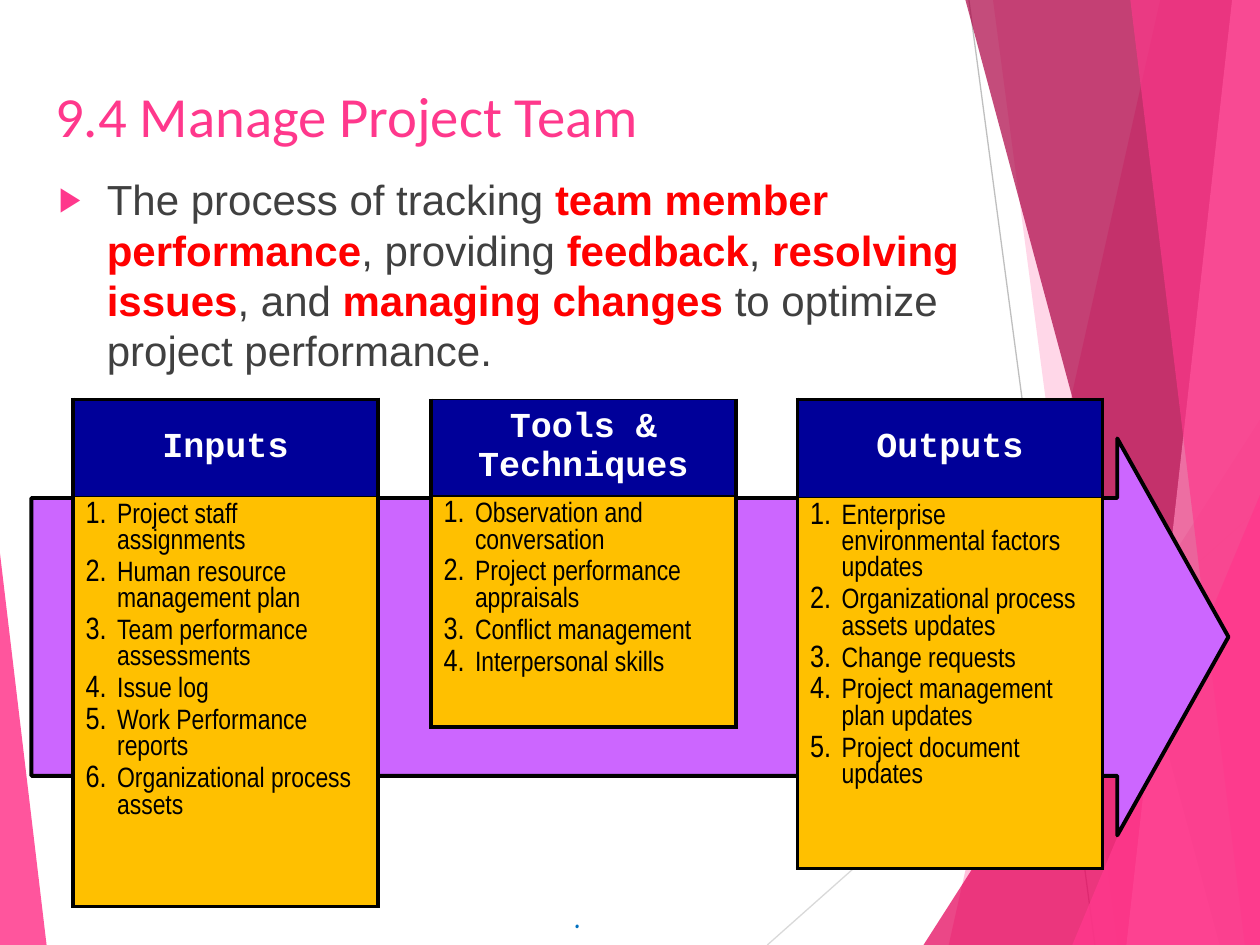
"""Build the Manage Project Team slide."""
from lxml import etree
from pptx import Presentation
from pptx import util as u
from pptx.dml import color
from pptx.enum import shapes, text
from pptx.oxml import ns

TITLE = "9.4 Manage Project Team"
BODY = [
    ("The process of tracking ", False), ("team member performance", True),
    (", providing ", False), ("feedback", True), (", ", False),
    ("resolving issues", True), (", and ", False),
    ("managing changes ", True), ("to optimize project performance.", False),
]
TABLES = [
    ("Inputs", 0.58, 0.77, 2.57, 2.25, [
        "Project staff assignments", "Human resource management plan",
        "Team performance assessments", "Issue log",
        "Work Performance reports", "Organizational process assets"]),
    ("Tools & Techniques", 3.42, 0.71, 1.48, 1, [
        "Observation and conversation", "Project performance appraisals",
        "Conflict management", "Interpersonal skills"]),
    ("Outputs", 6.33, 0.78, 2.57, 2.25, [
        "Enterprise environmental factors updates",
        "Organizational process assets updates", "Change requests",
        "Project management plan updates", "Project document updates"]),
]
RULES = [((7.69, 0), (8.69, 7.5), "BFBFBF"), ((10, 4.03), (6.09, 7.5), "D9D9D9")]
DECOR = [
    ("band", (9.21, 7.53), "FF388C", 30),
    ("band", (7.88, 8.87), "FF388C", 20),
    ("peak", (7.33, 3.33, 2.67, 4.17, 1), "E40059", 72),
    ("band", (7.66, 9.68), "AB0043", 70),
    ("band", (9.78, 8.94), "FF88BA", 70),
    ("band", (8.97, 9.88), "FF388C", 65),
    ("peak", (8.51, 3.93, 1.49, 3.57, 1), "FF388C", 80),
    ("peak", (0, 4.39, 0.37, 3.11, 0), "FF388C", 85),
]


def rgb(code):
    """Turn a hex string into a colour."""
    return color.RGBColor.from_string(code)


def node(base, tag, **attrs):
    """Append a drawing element."""
    return etree.SubElement(base, ns.qn("a:" + tag), attrs)


def paint(shape, code, alpha=100):
    """Fill a shape flat, with the given opacity."""
    shape.shadow.inherit = False
    shape.fill.solid()
    shape.fill.fore_color.rgb = rgb(code)
    shape.line.fill.background()
    if alpha < 100:
        tint = shape.fill._xPr.find(".//" + ns.qn("a:srgbClr"))
        node(tint, "alpha", val=str(alpha * 1000))


def write(para, words, size, font, code, bold=False):
    """Add one run."""
    run = para.add_run()
    run.text = words
    run.font.size, run.font.name, run.font.bold = u.Pt(size), font, bold
    run.font.color.rgb = rgb(code)


def bullet(para, indent, size, tag, code=None, **attrs):
    """Give a paragraph a hanging bullet or number."""
    props = para._p.get_or_add_pPr()
    props.set("marL", str(u.Inches(indent)))
    props.set("indent", str(-u.Inches(indent)))
    if code:
        node(node(props, "buClr"), "srgbClr", val=code)
    node(props, "buSzPct", val=str(size * 1000))
    node(props, "buFont", typeface="Arial")
    node(props, tag, **attrs)


def box(slide, *place):
    """Add a wrapping text box and return its first paragraph."""
    frame = slide.shapes.add_textbox(*map(u.Inches, place)).text_frame
    frame.word_wrap = True
    frame.vertical_anchor = text.MSO_ANCHOR.TOP
    return frame.paragraphs[0]


def dress(cell, code, top, base):
    """Set the borders and fill of a cell."""
    props = cell._tc.get_or_add_tcPr()
    for side, width in zip("LRTB", (2.25, 2.25, top, base)):
        edge = node(props, "ln" + side, w=str(u.Pt(width)))
        node(node(edge, "solidFill"), "srgbClr", val="000000")
    cell.fill.solid()
    cell.fill.fore_color.rgb = rgb(code)


def decorate(slide):
    """Draw the rules and the coloured facets."""
    for start, end, code in RULES:
        rule = slide.shapes.add_connector(
            shapes.MSO_CONNECTOR.STRAIGHT, *map(u.Inches, start + end))
        rule.line.color.rgb, rule.line.width = rgb(code), u.Pt(0.75)
        node(rule._element.spPr, "effectLst")
    for kind, spot, code, alpha in DECOR:
        if kind == "band":
            top, base = spot
            pen = slide.shapes.build_freeform(
                u.Inches(top), u.Inches(-0.01))
            pts = [(10, -0.01), (10, 7.5), (base, 7.5)]
            pen.add_line_segments([(u.Inches(x), u.Inches(y)) for x, y in pts])
            shape = pen.convert_to_shape()
        else:
            shape = slide.shapes.add_shape(
                shapes.MSO_SHAPE.ISOSCELES_TRIANGLE, *map(u.Inches, spot[:4]))
            shape.adjustments[0] = spot[4]
        paint(shape, code, alpha)


def tabulate(slide, name, left, head, depth, top, items):
    """Add a headed table with a numbered list."""
    table = slide.shapes.add_table(
        2, 1, *map(u.Inches, (left, 3.17, 2.42, head + depth))).table
    for row, high in zip(table.rows, (head, depth)):
        row.height = u.Inches(high)
    first, last = table.cell(0, 0), table.cell(1, 0)
    dress(first, "000099", top, 1)
    dress(last, "FFC000", 1, 2.25)
    first.vertical_anchor = text.MSO_ANCHOR.MIDDLE
    para = first.text_frame.paragraphs[0]
    para.alignment = text.PP_ALIGN.CENTER
    write(para, name, 20, "Courier New", "FFFFFF", True)
    frame = last.text_frame
    for spot, item in enumerate(items):
        para = frame.add_paragraph() if spot else frame.paragraphs[0]
        para.space_before = u.Pt(3.2)
        bullet(para, 0.25, 110, "buAutoNum", type="arabicPeriod")
        write(para, item, 16, "Arial Narrow", "000000")


def main():
    """Compose and save the slide."""
    deck = Presentation()
    deck.slide_width, deck.slide_height = u.Inches(10), u.Inches(7.5)
    slide = deck.slides.add_slide(deck.slide_layouts[6])
    decorate(slide)
    arrow = slide.shapes.add_shape(
        shapes.MSO_SHAPE.RIGHT_ARROW, *map(u.Inches, (0.25, 3.48, 9.5, 3.15)))
    arrow.adjustments[0], arrow.adjustments[1] = 0.7, 0.28
    paint(arrow, "CC66FF")
    arrow.line.color.rgb, arrow.line.width = rgb("000000"), u.Pt(2.25)
    write(box(slide, 0.34, 0.59, 8.33, 0.42), TITLE, 32.4, "Calibri", "FF388C")
    para = box(slide, 0.37, 1.33, 7.67, 1.63)
    para.space_before = u.Pt(10)
    bullet(para, 0.38, 80, "buChar", "FF388C", char="▶")
    for words, key in BODY:
        write(para, words, 24, "Arial", "FF0000" if key else "404040", key)
    for entry in TABLES:
        tabulate(slide, *entry)
    para = box(slide, 0.5, 6.99, 8.17, 0.51)
    para.alignment = text.PP_ALIGN.CENTER
    write(para, ".", 24, "Comic Neue", "0070C0")
    deck.save("out.pptx")


if __name__ == "__main__":
    main()
